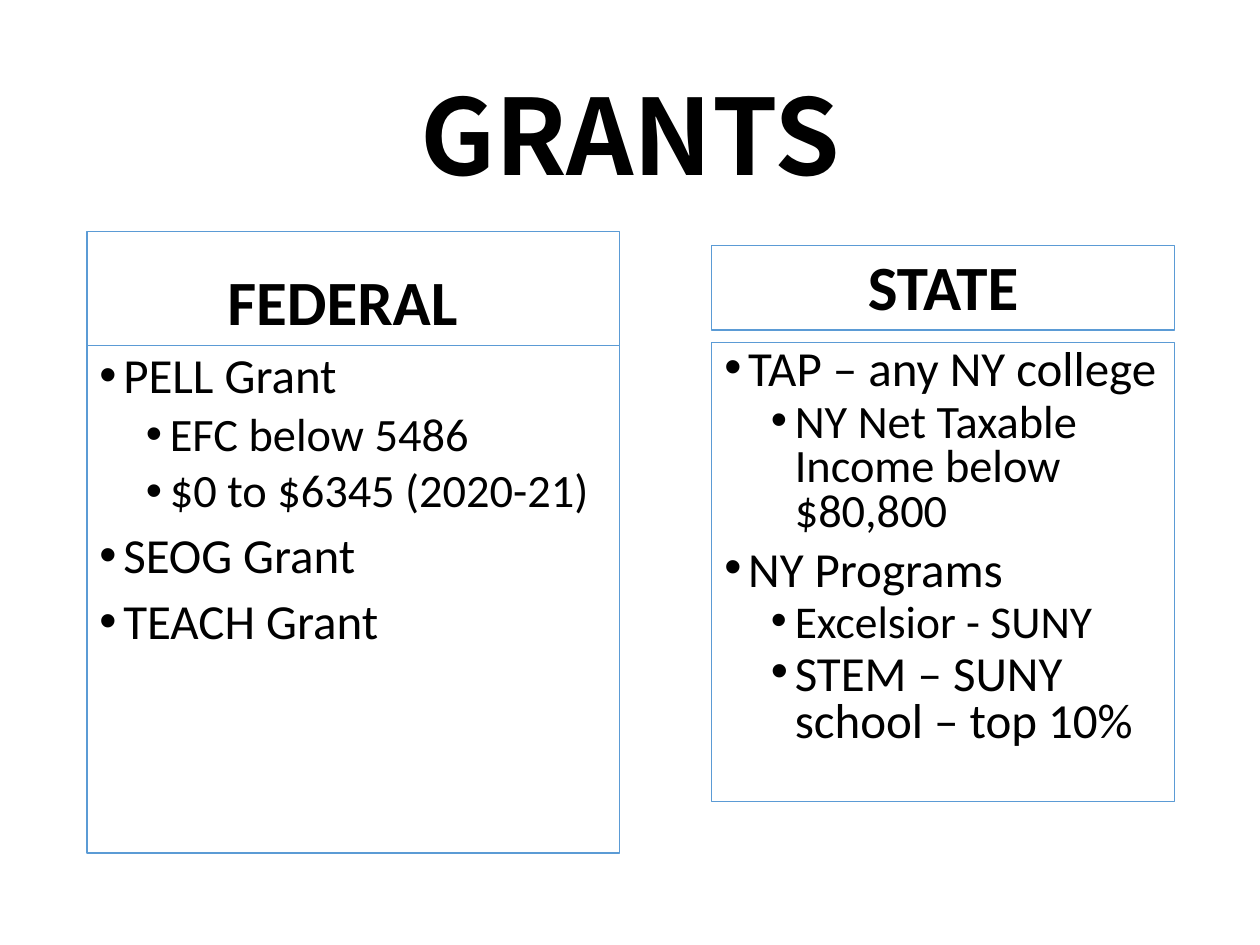
from dataclasses import dataclass

from lxml import etree
from pptx import Presentation
from pptx import util as u
from pptx.dml.color import RGBColor
from pptx.enum import shapes, text
from pptx.oxml.ns import qn

BLACK = RGBColor(0x00, 0x00, 0x00)
BORDER_BLUE = RGBColor(0x5B, 0x9B, 0xD5)
TITLE_FONT = "Noto Sans CJK SC"
BODY_FONT = "Calibri"
HANGING = 0.19
LEVEL_INDENTS = (0.19, 0.56)
LEVEL_SPACING = (7.5, 3.8)


@dataclass(frozen=True)
class Box:
    left: float
    top: float
    width: float
    height: float

    def lengths(self) -> tuple:
        return tuple(map(u.Inches, (self.left, self.top, self.width, self.height)))


@dataclass(frozen=True)
class Item:
    wording: str
    level: int = 0
    size: float = 28


@dataclass(frozen=True)
class GrantColumn:
    heading: str
    heading_box: Box
    list_box: Box
    line_spacing: float
    items: tuple[Item, ...]


COLUMNS = (
    GrantColumn(
        "FEDERAL\t",
        Box(0.69, 1.84, 4.23, 0.9),
        Box(0.69, 2.74, 4.23, 4.03),
        0.9,
        (
            Item("PELL Grant"),
            Item("EFC below 5486", 1, 26.5),
            Item("$0 to $6345 (2020-21)", 1, 26.5),
            Item("SEOG Grant"),
            Item("TEACH Grant"),
        ),
    ),
    GrantColumn(
        "STATE",
        Box(5.65, 1.95, 3.67, 0.67),
        Box(5.65, 2.72, 3.67, 3.64),
        0.8,
        (
            Item("TAP – any NY college"),
            Item("NY Net Taxable Income below $80,800", 1, 26.5),
            Item("NY Programs"),
            Item("Excelsior - SUNY", 1, 26),
            Item("STEM – SUNY school – top 10%", 1),
        ),
    ),
)


def write(paragraph, wording: str, *, size: float, font: str = BODY_FONT,
          bold: bool = False, align=text.PP_ALIGN.LEFT,
          line_spacing: float = 0.9, space_before: float = 0) -> None:
    paragraph.alignment = align
    paragraph.line_spacing = line_spacing
    paragraph.space_before = u.Pt(space_before)
    run = paragraph.add_run()
    run.text = wording
    run.font.name = font
    run.font.size = u.Pt(size)
    run.font.bold = bold
    run.font.color.rgb = BLACK


def add_bullet(paragraph, level: int) -> None:
    paragraph.level = level
    properties = paragraph._p.get_or_add_pPr()
    properties.set("marL", str(u.Inches(LEVEL_INDENTS[level])))
    properties.set("indent", str(-u.Inches(HANGING)))
    etree.SubElement(properties, qn("a:buFont")).set("typeface", "Arial")
    etree.SubElement(properties, qn("a:buChar")).set("char", "•")


def add_frame(slide, box: Box, anchor):
    panel = slide.shapes.add_shape(shapes.MSO_SHAPE.RECTANGLE, *box.lengths())
    panel.shadow.inherit = False
    panel.fill.background()
    panel.line.color.rgb = BORDER_BLUE
    panel.line.width = u.Pt(0.75)
    panel.text_frame.word_wrap = True
    panel.text_frame.vertical_anchor = anchor
    return panel.text_frame


def add_title(slide, wording: str, box: Box) -> None:
    frame = slide.shapes.add_textbox(*box.lengths()).text_frame
    frame.word_wrap = True
    frame.vertical_anchor = text.MSO_ANCHOR.MIDDLE
    write(frame.paragraphs[0], wording, size=60, font=TITLE_FONT, bold=True,
          align=text.PP_ALIGN.CENTER)


def add_column(slide, column: GrantColumn) -> None:
    heading = add_frame(slide, column.heading_box, text.MSO_ANCHOR.BOTTOM)
    write(heading.paragraphs[0], column.heading, size=36, bold=True,
          align=text.PP_ALIGN.CENTER, space_before=LEVEL_SPACING[0])

    grants = add_frame(slide, column.list_box, text.MSO_ANCHOR.TOP)
    for index, item in enumerate(column.items):
        paragraph = grants.add_paragraph() if index else grants.paragraphs[0]
        write(paragraph, item.wording, size=item.size,
              line_spacing=column.line_spacing,
              space_before=LEVEL_SPACING[item.level])
        add_bullet(paragraph, item.level)


def main() -> None:
    deck = Presentation()
    deck.slide_width, deck.slide_height = u.Inches(10), u.Inches(7.5)
    slide = deck.slides.add_slide(deck.slide_layouts[6])
    add_title(slide, "GRANTS", Box(0.69, 0.4, 8.62, 1.45))
    for column in COLUMNS:
        add_column(slide, column)
    deck.save("out.pptx")


if __name__ == "__main__":
    main()
